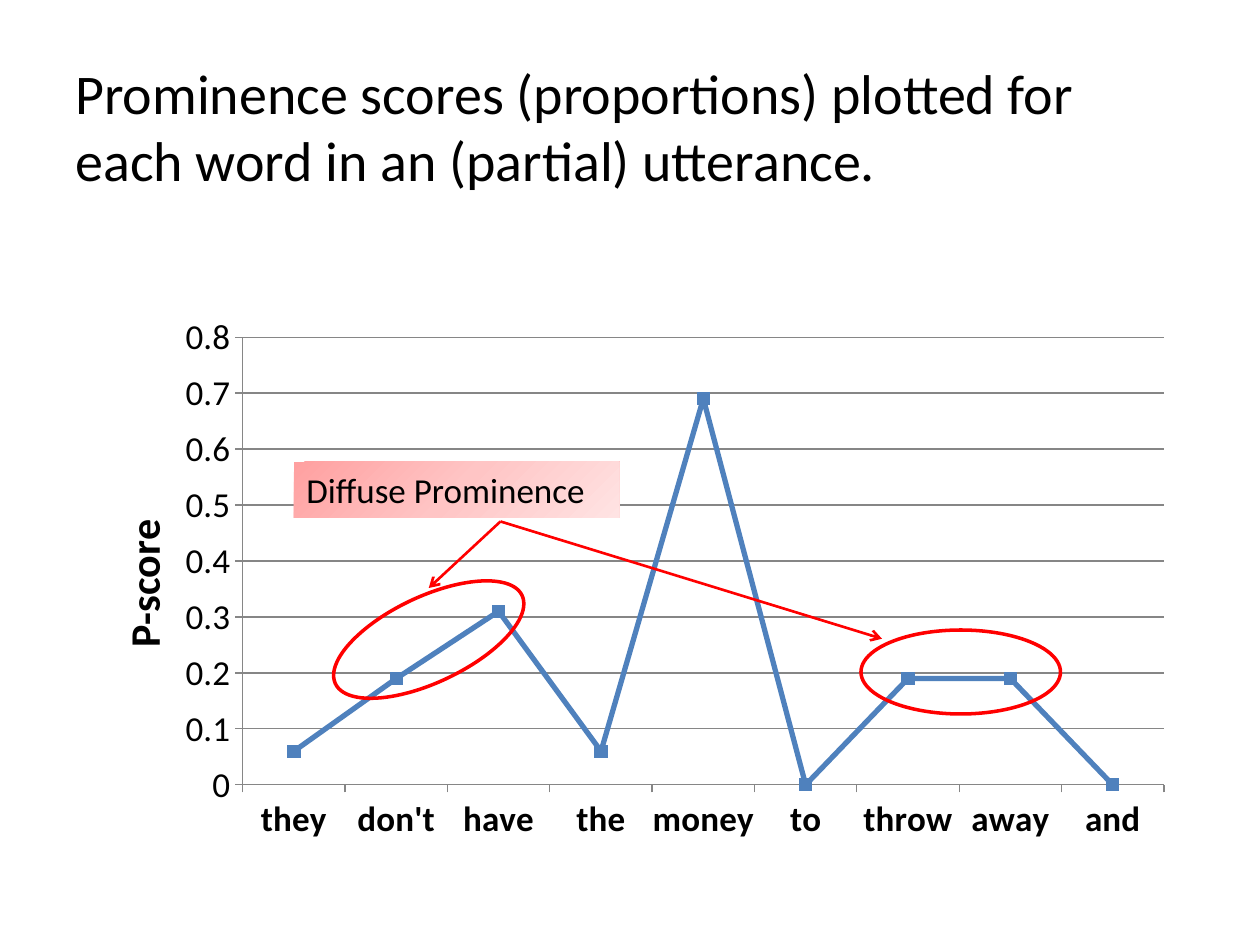
from copy import deepcopy

from lxml.etree import SubElement
from pptx import Presentation
from pptx.chart.data import CategoryChartData
from pptx.dml.color import RGBColor
from pptx.enum.chart import XL_CHART_TYPE as CHART, XL_MARKER_STYLE as MARKER, XL_TICK_MARK as TICK
from pptx.enum.shapes import MSO_CONNECTOR as CONN, MSO_SHAPE as SHAPE
from pptx.enum.text import MSO_ANCHOR as ANCHOR, PP_ALIGN as ALIGN
from pptx.oxml.ns import qn
from pptx.util import Pt

COLORS = {
    "text": "000000",
    "series": "4F81BD",
    "axis": "868686",
    "mark": "FF0000",
    "label_dark": "FFA0A0",
    "label_mid": "FFC5C5",
    "label_light": "FFE3E3",
}


def rgb(name):
    return RGBColor.from_string(COLORS[name])


class Deck:
    font_name = "Calibri"

    def __init__(self, prs):
        self.slide = prs.slides.add_slide(prs.slide_layouts[6])
        self.shapes = self.slide.shapes

    def style_font(self, font, size, bold=False):
        font.name = self.font_name
        font.size = Pt(size)
        font.bold = bold
        font.color.rgb = rgb("text")

    def style_line(self, line, color, width):
        line.color.rgb = rgb(color)
        line.width = Pt(width)

    def set_text(self, s, text, size, space_before=0):
        tf = s.text_frame
        tf.word_wrap = True
        tf.vertical_anchor = ANCHOR.TOP
        p = tf.paragraphs[0]
        p.text = text
        p.alignment = ALIGN.LEFT
        p.space_before = Pt(space_before)
        self.style_font(p.font, size)

    def text(self, box, text, size, space_before=0):
        self.set_text(self.shapes.add_textbox(*map(Pt, box)), text, size, space_before)

    def shape(self, kind, box):
        s = self.shapes.add_shape(kind, *map(Pt, box))
        s.shadow.inherit = False
        return s

    def gradient_label(self, box, text, size):
        s = self.shape(SHAPE.RECTANGLE, box)
        s.line.fill.background()
        s.fill.gradient()
        s.fill.gradient_angle = 315
        stop_list = s._element.spPr.find(".//" + qn("a:gsLst"))
        stop_list.insert(1, deepcopy(stop_list[0]))
        names = ("label_dark", "label_mid", "label_light")
        for stop, name, position in zip(s.fill.gradient_stops, names, (0, 0.5, 1)):
            stop.color.rgb = rgb(name)
            stop.position = position
        self.set_text(s, text, size)

    def ring(self, box, rotation=0):
        s = self.shape(SHAPE.OVAL, box)
        s.fill.background()
        s.rotation = rotation
        self.style_line(s.line, "mark", 2)

    def arrow(self, start, end):
        s = self.shapes.add_connector(CONN.STRAIGHT, *map(Pt, start + end))
        self.style_line(s.line, "mark", 1.5)
        SubElement(s._element.spPr.find(qn("a:ln")), qn("a:tailEnd"), type="arrow")
        SubElement(s._element.spPr, qn("a:effectLst"))

    def place(self, element, index, **fractions):
        layout = element.find(qn("c:layout"))
        if layout is None:
            layout = SubElement(element, qn("c:layout"))
            element.insert(index, layout)
        manual = SubElement(layout, qn("c:manualLayout"))
        if "w" in fractions:
            SubElement(manual, qn("c:layoutTarget"), val="inner")
        for side in "xy":
            SubElement(manual, qn(f"c:{side}Mode"), val="edge")
        for key, value in fractions.items():
            SubElement(manual, qn(f"c:{key}"), val=str(value))

    def line_chart(self, box, categories, values, axis_title):
        data = CategoryChartData()
        data.categories = categories
        data.add_series("Series 1", values)
        chart = self.shapes.add_chart(CHART.LINE_MARKERS, *map(Pt, box), data).chart
        chart.has_legend = False
        chart.has_title = False
        self.style_font(chart.font, 20)

        series = chart.plots[0].series[0]
        chart.plots[0].vary_by_categories = False
        series.smooth = False
        self.style_line(series.format.line, "series", 3)
        series.marker.style = MARKER.SQUARE
        series.marker.size = 7
        series.marker.format.fill.solid()
        series.marker.format.fill.fore_color.rgb = rgb("series")
        series.marker.format.line.color.rgb = rgb("series")

        for axis, bold in ((chart.category_axis, True), (chart.value_axis, False)):
            self.style_font(axis.tick_labels.font, 20, bold)
            self.style_line(axis.format.line, "axis", 0.75)
            axis.major_tick_mark = TICK.OUTSIDE
            axis.minor_tick_mark = TICK.NONE

        axis = chart.value_axis
        axis.minimum_scale, axis.maximum_scale, axis.major_unit = 0, 0.8, 0.1
        axis.tick_labels.number_format = "General"
        axis.tick_labels.number_format_is_linked = False
        self.style_line(axis.major_gridlines.format.line, "axis", 0.75)
        tf = axis.axis_title.text_frame
        tf.text = axis_title
        self.style_font(tf.paragraphs[0].font, 24, True)
        tf._txBody.find(qn("a:bodyPr")).set("rot", "-5400000")

        plot_area = chart._chartSpace.chart.plotArea
        self.place(plot_area, 0, x=0.16, y=0.06, w=0.82, h=0.82)
        self.place(axis.axis_title._element, 1, x=0.04, y=0.38)


def main():
    prs = Presentation()
    prs.slide_width, prs.slide_height = Pt(720), Pt(540)
    deck = Deck(prs)

    words = ("they", "don't", "have", "the", "money", "to", "throw", "away", "and")
    scores = (0.06, 0.19, 0.31, 0.06, 0.69, 0, 0.19, 0.19, 0)
    deck.line_chart((36, 174, 642, 312), words, scores, "P-score")

    deck.gradient_label((168, 264, 186, 32), "Diffuse Prominence", 20)
    deck.ring((186, 341, 118, 49), rotation=334.7)
    deck.ring((492, 360, 114, 48))
    for target in ((245, 336), (504, 365)):
        deck.arrow((286, 298), target)

    title = "Prominence scores (proportions) plotted for each word in an (partial) utterance."
    deck.text((36, 30, 648, 102), title, 32, space_before=6.4)
    prs.save("out.pptx")


if __name__ == "__main__":
    main()
